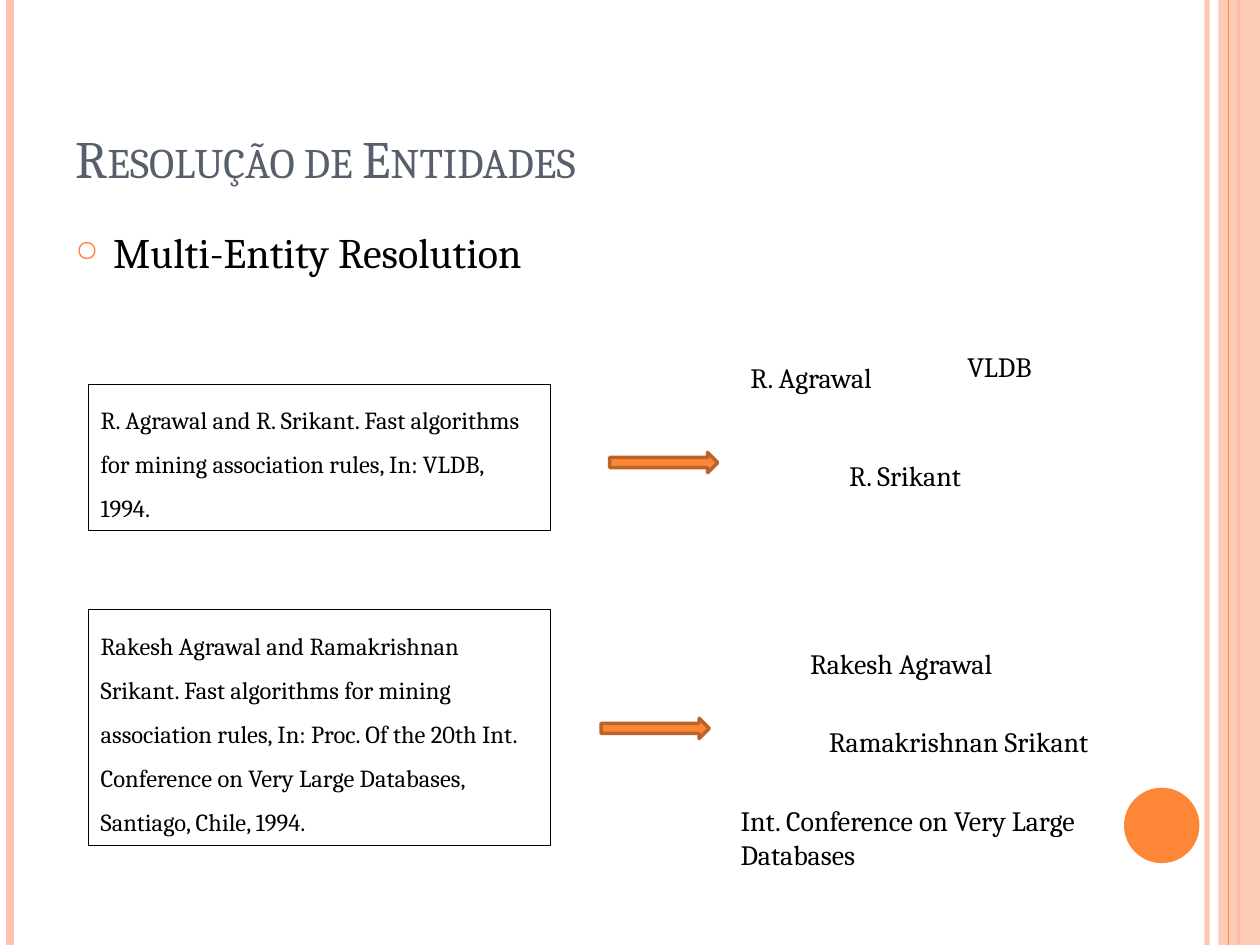
from lxml import etree
from pptx import Presentation
from pptx.dml.color import RGBColor
from pptx.enum.shapes import MSO_CONNECTOR, MSO_SHAPE
from pptx.enum.text import MSO_ANCHOR, MSO_AUTO_SIZE, PP_ALIGN
from pptx.oxml.ns import qn
from pptx.util import Cm, Pt

STRAIGHT = MSO_CONNECTOR.STRAIGHT
RECTANGLE, OVAL, RIGHT_ARROW = MSO_SHAPE.RECTANGLE, MSO_SHAPE.OVAL, MSO_SHAPE.RIGHT_ARROW
TOP, BOTTOM = MSO_ANCHOR.TOP, MSO_ANCHOR.BOTTOM
LEFT = PP_ALIGN.LEFT
GROW = MSO_AUTO_SIZE.SHAPE_TO_FIT_TEXT

ORANGE = RGBColor(0xFE, 0x86, 0x37)
DARK_ORANGE = RGBColor(0xBC, 0x63, 0x29)
PEACH = RGBColor(0xFE, 0xC3, 0xAE)
SLATE = RGBColor(0x57, 0x5F, 0x6D)
BLACK = RGBColor(0, 0, 0)
FONT = "Cambria"
SLIDE_WIDTH, SLIDE_HEIGHT = 25.4, 19.05

# All positions and sizes below are in centimetres.
TITLE = "Resolução de Entidades"
SUBTITLE = "Multi-Entity Resolution"
# x, colour, width in points, opacity in percent
STRIPES_BELOW = [(24.33, PEACH, 3, 93), (0.2, PEACH, 4.5, 100), (24.97, ORANGE, 1.5, 100)]
STRIPES_ABOVE = [(24.77, ORANGE, 0.75, 100)]
BAND_LEFT, BAND_OPACITY = 24.56, 87
CITATIONS = [  # top, height, text
    (7.75, 2.95, "R. Agrawal and R. Srikant. Fast algorithms for mining association rules, "
                 "In: VLDB, 1994."),
    (12.29, 4.75, "Rakesh Agrawal and Ramakrishnan Srikant. Fast algorithms for mining "
                  "association rules, In: Proc. Of the 20th Int. Conference on Very Large "
                  "Databases, Santiago, Chile, 1994."),
]
ENTITIES = [  # left, top, width, height, wraps, text
    (14.88, 7.14, 3.48, 0.94, False, "R. Agrawal"),
    (16.87, 9.12, 3.25, 0.94, False, "R. Srikant"),
    (19.25, 6.93, 2.16, 0.94, False, "VLDB"),
    (16.08, 12.9, 4.85, 0.94, False, "Rakesh Agrawal"),
    (16.46, 14.48, 6.63, 0.94, False, "Ramakrishnan Srikant"),
    (14.68, 16.08, 7.75, 1.63, True, "Int. Conference on Very Large Databases"),
]
ARROWS = [(12.29, 9.12), (12.12, 14.48)]  # left, top


def set_opacity(element, percent):
    color = next(element.iter(qn("a:srgbClr")))
    etree.SubElement(color, qn("a:alpha")).set("val", str(percent * 1000))


def add_stripe(slide, x, color, width, opacity):
    stripe = slide.shapes.add_connector(STRAIGHT, Cm(x), 0, Cm(x), Cm(SLIDE_HEIGHT))
    stripe.line.color.rgb = color
    stripe.line.width = Pt(width)
    properties = stripe.line._get_or_add_ln().getparent()
    if opacity < 100:
        set_opacity(properties, opacity)
    etree.SubElement(properties, qn("a:effectLst"))


def add_shape(slide, kind, box, fill=None, line=None, line_width=0.75):
    shape = slide.shapes.add_shape(kind, *map(Cm, box))
    shape.shadow.inherit = False
    if fill is None:
        shape.fill.background()
    else:
        shape.fill.solid()
        shape.fill.fore_color.rgb = fill
    if line is None:
        shape.line.fill.background()
    else:
        shape.line.color.rgb = line
        shape.line.width = Pt(line_width)
    return shape


def write(shape, text, size, color=BLACK, anchor=TOP, wrap=True, grow=False, bullet=None):
    frame = shape.text_frame
    frame.word_wrap = wrap
    frame.vertical_anchor = anchor
    if grow:
        frame.auto_size = GROW
    paragraph = frame.paragraphs[0]
    paragraph.add_run().text = text
    paragraph.alignment = LEFT
    if bullet:
        add_bullet(paragraph, bullet)
    paragraph.font.name = FONT
    paragraph.font.size = Pt(size)
    paragraph.font.color.rgb = color
    return paragraph


def add_bullet(paragraph, character):
    properties = paragraph._p.get_or_add_pPr()
    indent = Cm(0.76)
    properties.set("marL", str(indent))
    properties.set("indent", str(-indent))
    color = etree.SubElement(properties, qn("a:buClr"))
    etree.SubElement(color, qn("a:srgbClr")).set("val", str(ORANGE))
    etree.SubElement(properties, qn("a:buSzPct")).set("val", "70000")
    etree.SubElement(properties, qn("a:buChar")).set("char", character)


def add_text(slide, box, text, size, **style):
    return write(slide.shapes.add_textbox(*map(Cm, box)), text, size, **style)


def main():
    presentation = Presentation()
    presentation.slide_width = Cm(SLIDE_WIDTH)
    presentation.slide_height = Cm(SLIDE_HEIGHT)
    slide = presentation.slides.add_slide(presentation.slide_layouts[6])

    for stripe in STRIPES_BELOW:
        add_stripe(slide, *stripe)
    band_box = (BAND_LEFT, 0, SLIDE_WIDTH - BAND_LEFT, SLIDE_HEIGHT)
    band = add_shape(slide, RECTANGLE, band_box, fill=PEACH)
    set_opacity(band._element.spPr, BAND_OPACITY)
    for stripe in STRIPES_ABOVE:
        add_stripe(slide, *stripe)
    add_shape(slide, OVAL, (22.66, 15.88, 1.52, 1.52), fill=ORANGE)

    title = add_text(slide, (1.27, 0.76, 20.75, 3.18), TITLE, 30, color=SLATE, anchor=BOTTOM)
    title.runs[0]._r.get_or_add_rPr().set("cap", "small")
    add_text(slide, (1.27, 4.45, 20.75, 13.54), SUBTITLE, 24, bullet="○")

    for top, height, text in CITATIONS:
        citation = add_shape(slide, RECTANGLE, (1.78, top, 9.32, height), line=BLACK)
        write(citation, text, 14, grow=True).line_spacing = 1.5
    for *box, wrap, text in ENTITIES:
        add_text(slide, box, text, 16, wrap=wrap, grow=True)
    for left, top in ARROWS:
        add_shape(slide, RIGHT_ARROW, (left, top, 2.18, 0.41), ORANGE, DARK_ORANGE, 2)

    presentation.save("out.pptx")


if __name__ == "__main__":
    main()
